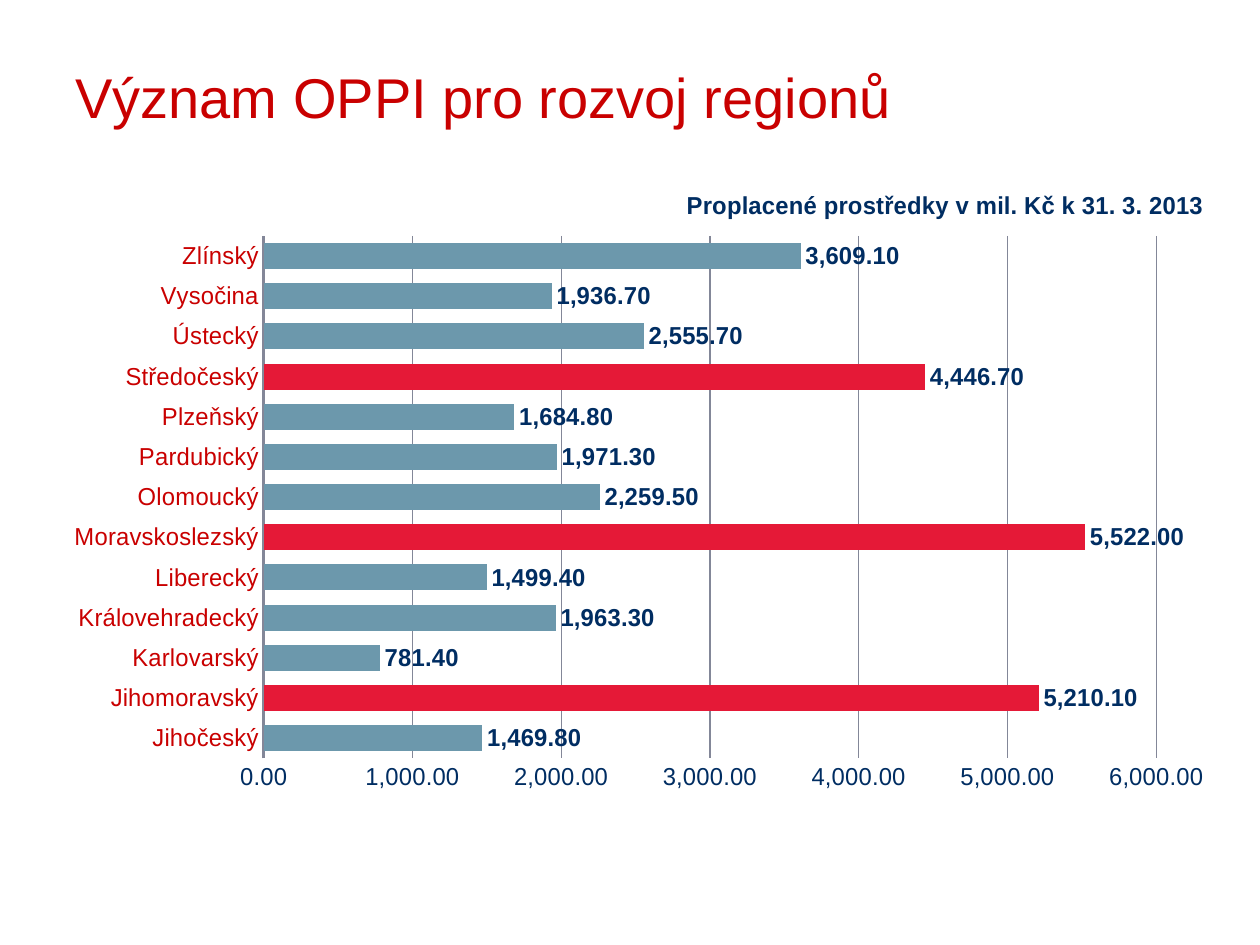
import dataclasses
import typing

import lxml.etree
import pptx
import pptx.chart.data
import pptx.dml.color
import pptx.enum.chart
import pptx.enum.text
import pptx.oxml
import pptx.oxml.ns
import pptx.util

Pt = pptx.util.Pt
FONT_NAME = "Arial"
RED = "C90000"
NAVY = "002D62"
BAR_BLUE = "6C98AC"
BAR_RED = "E51937"
GRID_GRAY = "838798"
NUMBER_FORMAT = "#,##0.00"


@dataclasses.dataclass(frozen=True)
class Region:
    name: str
    paid: float
    highlighted: bool = False


@dataclasses.dataclass(frozen=True)
class Box:
    left: float
    top: float
    width: float
    height: float

    def lengths(self) -> list[pptx.util.Length]:
        return [Pt(value) for value in dataclasses.astuple(self)]


REGIONS = [
    Region("Jihočeský", 1469.8),
    Region("Jihomoravský", 5210.1, True),
    Region("Karlovarský", 781.4),
    Region("Královehradecký", 1963.3),
    Region("Liberecký", 1499.4),
    Region("Moravskoslezský", 5522, True),
    Region("Olomoucký", 2259.5),
    Region("Pardubický", 1971.3),
    Region("Plzeňský", 1684.8),
    Region("Středočeský", 4446.7, True),
    Region("Ústecký", 2555.7),
    Region("Vysočina", 1936.7),
    Region("Zlínský", 3609.1),
]


def color(hex_value: str) -> pptx.dml.color.RGBColor:
    return pptx.dml.color.RGBColor.from_string(hex_value)


def apply(target: typing.Any, values: dict[str, typing.Any]) -> None:
    for name, value in values.items():
        setattr(target, name, value)


def format_font(font: typing.Any, size: float, hex_value: str, bold: bool = False) -> None:
    apply(font, {"name": FONT_NAME, "size": Pt(size), "bold": bold})
    font.color.rgb = color(hex_value)


def fill_solid(fill: typing.Any, hex_value: str) -> None:
    fill.solid()
    fill.fore_color.rgb = color(hex_value)


def format_line(line: typing.Any, width: float) -> None:
    line.color.rgb = color(GRID_GRAY)
    line.width = Pt(width)


def set_layout(parent: typing.Any, values: dict[str, typing.Any]) -> None:
    layout = parent.get_or_add_layout() if hasattr(parent, "get_or_add_layout") else None
    if layout is None:
        layout = parent.find(pptx.oxml.ns.qn("c:layout"))
    if layout is None:
        layout = pptx.oxml.parse_xml(f"<c:layout {pptx.oxml.ns.nsdecls('c')}/>")
        parent.insert(0, layout)
    for child in list(layout):
        layout.remove(child)
    manual = lxml.etree.SubElement(layout, pptx.oxml.ns.qn("c:manualLayout"))
    for name, value in values.items():
        lxml.etree.SubElement(manual, pptx.oxml.ns.qn(f"c:{name}")).set("val", str(value))


def add_heading(slide: typing.Any, text: str, box: Box) -> None:
    shape = slide.shapes.add_textbox(*box.lengths())
    frame = shape.text_frame
    apply(frame, {"word_wrap": True, "vertical_anchor": pptx.enum.text.MSO_ANCHOR.MIDDLE})
    paragraph = frame.paragraphs[0]
    run = paragraph.add_run()
    run.text = text
    format_font(run.font, 32, RED)


def add_title(chart: typing.Any, text: str) -> None:
    chart.has_title = True
    paragraph = chart.chart_title.text_frame.paragraphs[0]
    run = paragraph.add_run()
    run.text = text
    format_font(run.font, 14, NAVY, True)
    title = chart.chart_title._element
    set_layout(title, {"xMode": "edge", "yMode": "edge", "x": 0.53, "y": 0.03})


def format_axes(chart: typing.Any) -> None:
    tick_marks = {
        "major_tick_mark": pptx.enum.chart.XL_TICK_MARK.NONE,
        "minor_tick_mark": pptx.enum.chart.XL_TICK_MARK.NONE,
    }
    category_axis, value_axis = chart.category_axis, chart.value_axis
    apply(category_axis, tick_marks | {"has_major_gridlines": False})
    apply(value_axis, tick_marks | {
        "has_major_gridlines": True,
        "minimum_scale": 0,
        "maximum_scale": 6000,
        "major_unit": 1000,
    })
    apply(value_axis.tick_labels, {"number_format": NUMBER_FORMAT, "number_format_is_linked": False})
    format_font(category_axis.tick_labels.font, 14, RED)
    format_font(value_axis.tick_labels.font, 14, NAVY)
    format_line(category_axis.format.line, 2)
    format_line(value_axis.major_gridlines.format.line, 0.75)
    value_axis.format.line.fill.background()


def format_bars(chart: typing.Any, regions: list[Region]) -> None:
    plot = chart.plots[0]
    apply(plot, {"gap_width": 55, "vary_by_categories": False, "has_data_labels": True})
    series = plot.series[0]
    series.invert_if_negative = False
    fill_solid(series.format.fill, BAR_BLUE)
    for index, region in enumerate(regions):
        if region.highlighted:
            fill_solid(series.points[index].format.fill, BAR_RED)
    labels = plot.data_labels
    apply(labels, {
        "show_value": True,
        "number_format": NUMBER_FORMAT,
        "number_format_is_linked": False,
        "position": pptx.enum.chart.XL_LABEL_POSITION.OUTSIDE_END,
    })
    format_font(labels.font, 14, NAVY, True)


def add_region_chart(slide: typing.Any, regions: list[Region], box: Box) -> None:
    data = pptx.chart.data.CategoryChartData(number_format=NUMBER_FORMAT)
    data.categories = [region.name for region in regions]
    data.add_series("Series 1", [region.paid for region in regions])
    chart = slide.shapes.add_chart(
        pptx.enum.chart.XL_CHART_TYPE.BAR_CLUSTERED, *box.lengths(), data
    ).chart
    chart.has_legend = False
    format_font(chart.font, 14, NAVY)
    add_title(chart, "Proplacené prostředky v mil. Kč k 31. 3. 2013")
    format_axes(chart)
    format_bars(chart, regions)
    set_layout(chart._chartSpace.chart.plotArea, {
        "layoutTarget": "inner", "xMode": "edge", "yMode": "edge",
        "x": 0.15, "y": 0.11, "w": 0.81, "h": 0.81,
    })


def main() -> None:
    presentation = pptx.Presentation()
    apply(presentation, {"slide_width": Pt(720), "slide_height": Pt(540)})
    slide = presentation.slides.add_slide(presentation.slide_layouts[6])
    add_heading(slide, "Význam OPPI pro rozvoj regionů", Box(36, 21.6, 647.3, 67))
    add_region_chart(slide, REGIONS, Box(42.5, 94.3, 648, 368.6))
    presentation.save("out.pptx")


if __name__ == "__main__":
    main()
